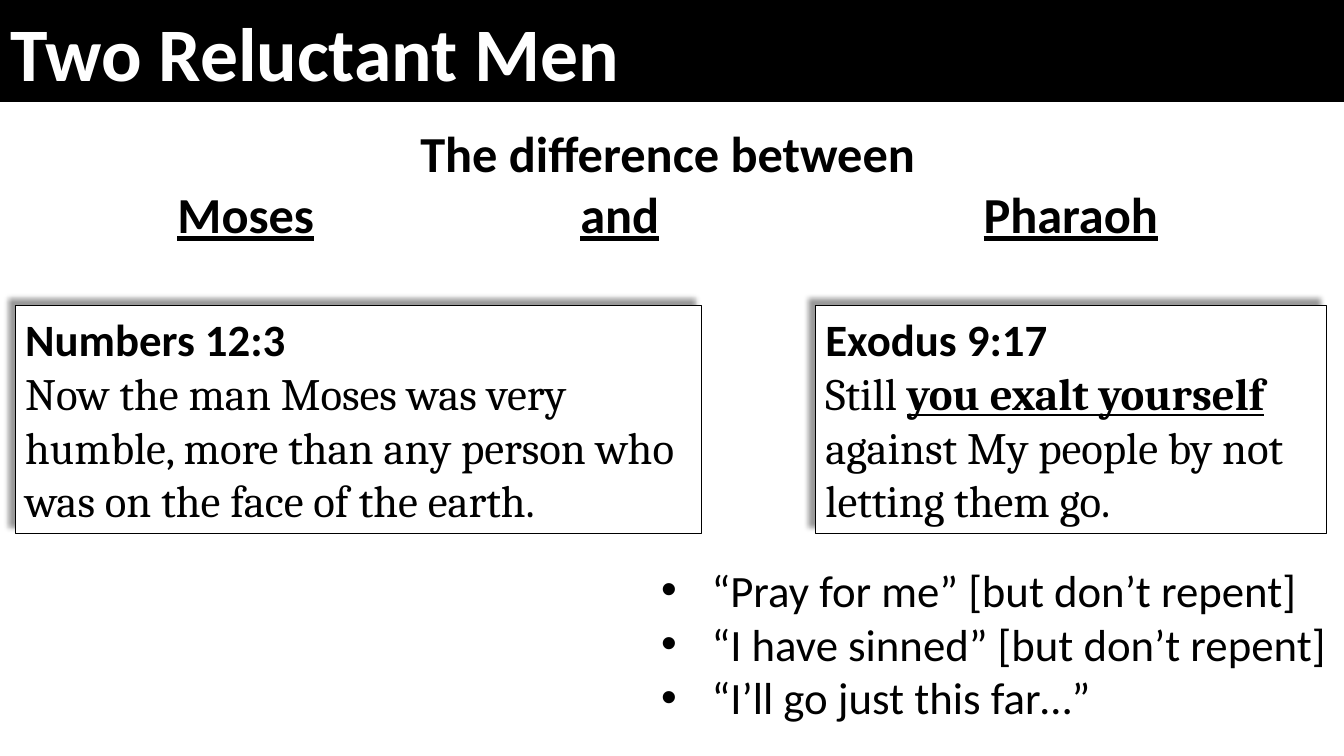
from dataclasses import dataclass

from lxml.etree import SubElement
from pptx import Presentation
from pptx.dml.color import RGBColor
from pptx.enum.shapes import MSO_SHAPE
from pptx.enum.text import MSO_ANCHOR, MSO_AUTO_SIZE, PP_ALIGN
from pptx.oxml.ns import qn
from pptx.util import Pt


@dataclass(frozen=True)
class Theme:
    ink: RGBColor = RGBColor(0, 0, 0)
    paper: RGBColor = RGBColor(255, 255, 255)
    sans: str = "Calibri"
    serif: str = "Cambria"
    title_size: float = 54
    heading_size: float = 36
    text_size: float = 32


THEME = Theme()


@dataclass(frozen=True)
class Box:
    left: float
    top: float
    width: float
    height: float

    def place(self, shape):
        shape.left, shape.top = Pt(self.left), Pt(self.top)
        shape.width, shape.height = Pt(self.width), Pt(self.height)


def add_span(para, text, size=THEME.text_size, font=THEME.sans,
             color=THEME.ink, bold=False, underline=False):
    span = para.add_run()
    span.text = text
    span.font.size = Pt(size)
    span.font.name = font
    span.font.color.rgb = color
    span.font.bold = bold
    span.font.underline = underline


def prepare_frame(shape, anchor):
    frame = shape.text_frame
    frame.word_wrap = True
    frame.auto_size = MSO_AUTO_SIZE.SHAPE_TO_FIT_TEXT
    frame.vertical_anchor = anchor
    return frame


def next_para(frame, first, align=PP_ALIGN.LEFT):
    para = frame.paragraphs[0] if first else frame.add_paragraph()
    para.alignment = align
    para.space_before = Pt(0)
    return para


def fill_shape(shape, color):
    shape.fill.solid()
    shape.fill.fore_color.rgb = color


def add_panel(page, box):
    panel = page.shapes.add_shape(
        MSO_SHAPE.RECTANGLE, Pt(box.left), Pt(box.top), Pt(box.width), Pt(box.height))
    fill_shape(panel, THEME.paper)
    panel.line.fill.background()
    panel.shadow.inherit = False
    return panel


def add_shadow(panel):
    effects = panel._element.spPr.find(qn("a:effectLst"))
    shadow = SubElement(effects, qn("a:outerShdw"), blurRad=str(Pt(4)),
                        dist=str(Pt(7)), dir=str(225 * 60000), rotWithShape="0")
    color = SubElement(shadow, qn("a:srgbClr"), val=str(THEME.ink))
    SubElement(color, qn("a:alpha"), val="40000")


def build_title(page, box, text):
    title = page.shapes.title
    box.place(title)
    fill_shape(title, THEME.ink)
    frame = prepare_frame(title, MSO_ANCHOR.MIDDLE)
    add_span(next_para(frame, True), text, size=THEME.title_size,
             color=THEME.paper, bold=True)


def build_heading(page, box, lead, columns):
    frame = prepare_frame(add_panel(page, box), MSO_ANCHOR.MIDDLE)
    style = dict(size=THEME.heading_size, bold=True)
    add_span(next_para(frame, True, PP_ALIGN.CENTER), lead, **style)
    para = next_para(frame, False)
    stops = SubElement(para._p.get_or_add_pPr(), qn("a:tabLst"))
    for word, center in columns:
        SubElement(stops, qn("a:tab"), pos=str(Pt(center)), algn="ctr")
        add_span(para, "\t", **style)
        add_span(para, word, underline=True, **style)


def build_verse(page, box, reference, parts):
    panel = add_panel(page, box)
    panel.line.color.rgb = THEME.ink
    panel.line.width = Pt(0.75)
    add_shadow(panel)
    frame = prepare_frame(panel, MSO_ANCHOR.MIDDLE)
    add_span(next_para(frame, True), reference, bold=True)
    para = next_para(frame, False)
    for text, strong in parts:
        add_span(para, text, font=THEME.serif, bold=strong, underline=strong)


def build_list(page, box, items):
    body = page.placeholders[1]
    box.place(body)
    frame = prepare_frame(body, MSO_ANCHOR.TOP)
    for index, item in enumerate(items):
        para = next_para(frame, index == 0)
        properties = para._p.get_or_add_pPr()
        properties.set("marL", str(Pt(36)))
        properties.set("indent", str(-Pt(36)))
        SubElement(properties, qn("a:buFont"), typeface="Arial")
        SubElement(properties, qn("a:buChar"), char="•")
        add_span(para, item)


def main():
    deck = Presentation()
    deck.slide_width, deck.slide_height = Pt(960), Pt(540)
    page = deck.slides.add_slide(deck.slide_layouts[1])
    build_title(page, Box(0, 0, 960, 72.7), "Two Reluctant Men")
    build_heading(page, Box(0, 83.5, 954, 94.3), "The difference between",
                  [("Moses", 168.5), ("and", 435.6), ("Pharaoh", 757.8)])
    build_verse(page, Box(582.5, 218.2, 365, 162.7), "Exodus 9:17",
                [("Still ", False), ("you exalt yourself", True),
                 (" against My people by not letting them go.", False)])
    build_verse(page, Box(10.8, 218.2, 490.3, 162.7), "Numbers 12:3",
                [("Now the man Moses was very humble, more than any person "
                  "who was on the face of the earth.", False)])
    build_list(page, Box(465.1, 398.2, 490.3, 123.8),
               ["“Pray for me” [but don’t repent]",
                "“I have sinned” [but don’t repent]",
                "“I’ll go just this far…”"])
    deck.save("out.pptx")


if __name__ == "__main__":
    main()
